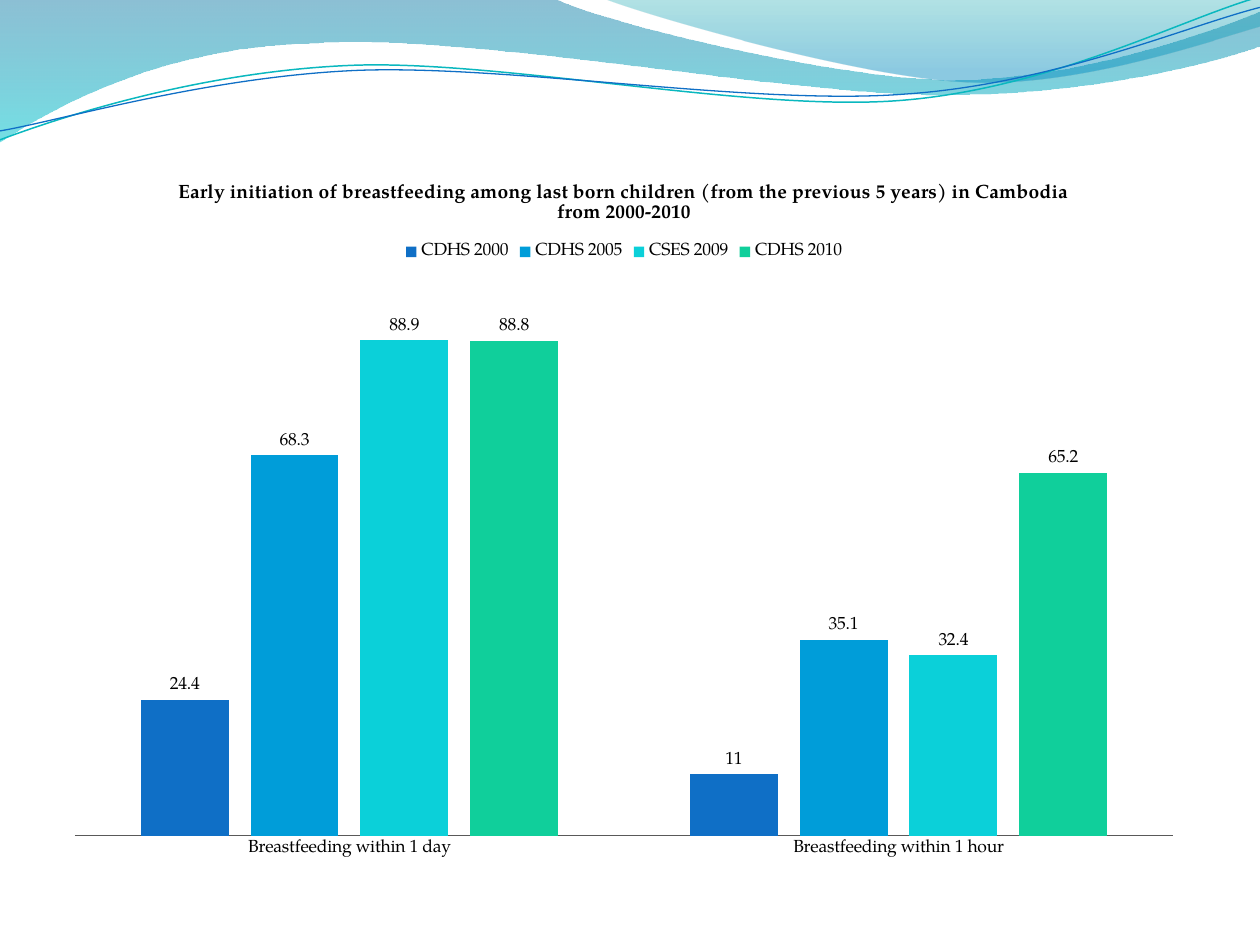
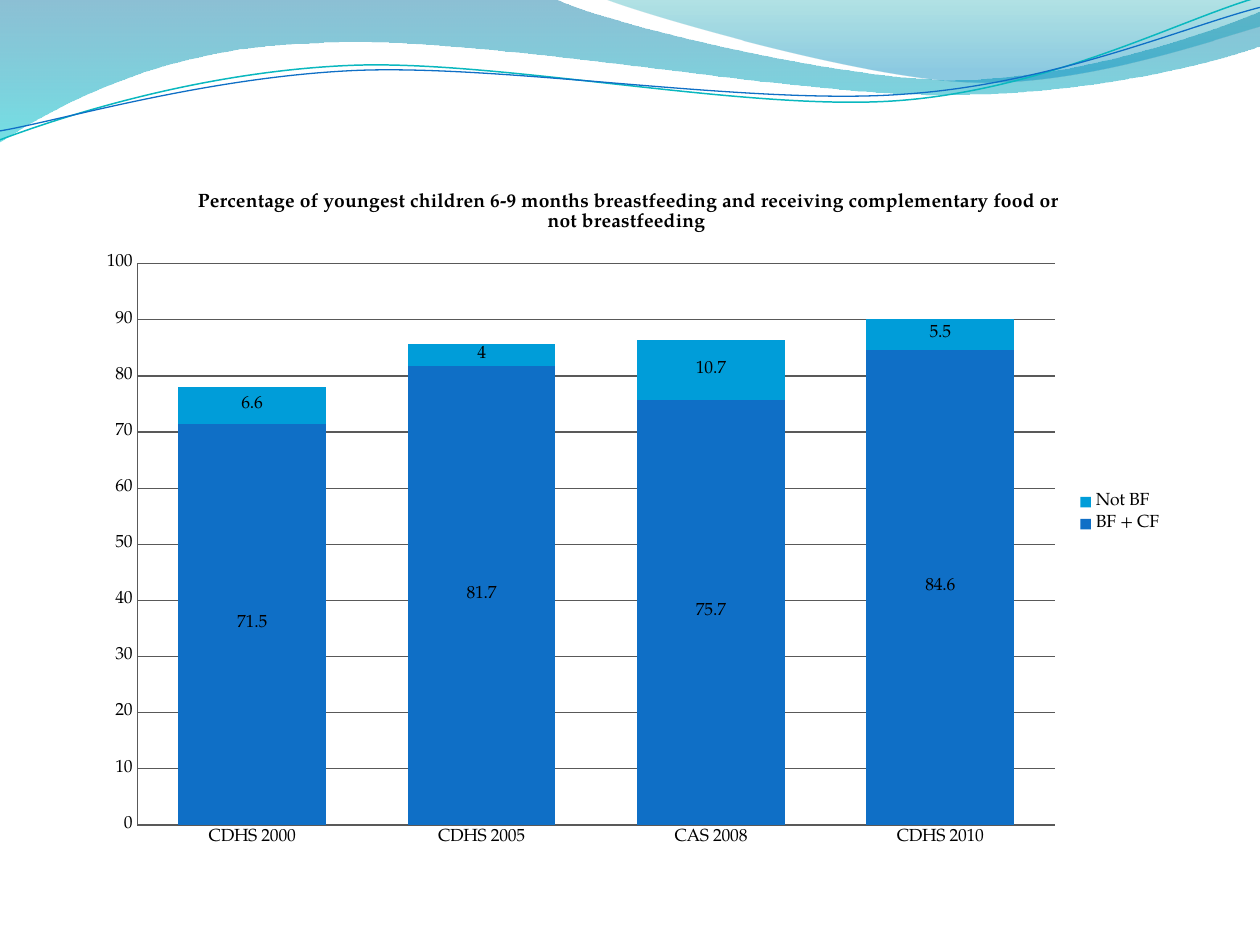
from dataclasses import dataclass
from itertools import chain
from typing import Optional

from lxml.etree import SubElement
from pptx import Presentation
from pptx.chart.data import CategoryChartData as ChartData
from pptx.dml.color import RGBColor
from pptx.enum.chart import XL_CHART_TYPE as ChartType
from pptx.enum.chart import XL_LABEL_POSITION as LabelPos
from pptx.enum.chart import XL_LEGEND_POSITION as LegendPos
from pptx.enum.chart import XL_TICK_MARK as Tick
from pptx.oxml import parse_xml
from pptx.oxml.ns import nsdecls, qn
from pptx.util import Cm, Pt

FONT = "TeX Gyre Pagella"
BLACK, AXIS = "000000", "595959"
BLUE, SKY, CYAN, GREEN = "0F6FC6", "009DD9", "0BD0D9", "10CF9B"
SERIES_COLORS = (BLUE, SKY, CYAN, GREEN)


@dataclass(frozen=True)
class Stop:
    """One gradient stop: place, colour and opacity in percent."""
    position: float
    color: str
    opacity: int


@dataclass(frozen=True)
class Wave:
    """A band or line in cm; a segment holds one point (line) or three (curve)."""
    start: tuple[float, float]
    segments: tuple[tuple[tuple[float, float], ...], ...]
    stops: tuple[Stop, ...] = ()
    line: str = ""
    width: float = 0


@dataclass(frozen=True)
class ChartSpec:
    """A column chart with its box in cm and its plot area as fractions."""
    title: str
    kind: ChartType
    box: tuple[float, float, float, float]
    plot: tuple[float, float, float, float]
    categories: tuple[str, ...]
    series: dict[str, tuple[float, ...]]
    gap: int
    overlap: int
    legend: LegendPos
    show_scale: bool
    label_pos: Optional[LabelPos] = None


WAVES = (
    Wave((0, 0), (
        ((11.18, -0.03),),
        ((12.09, 0.43), (16.87, 1.6), (19.25, 1.6)),
        ((21.67, 1.6), (24.33, 0.66), (25.4, 0.23)),
        ((25.43, 0.91),),
        ((24.97, 1.12), (22.1, 1.93), (18.95, 1.91)),
        ((15.8, 1.91), (9.7, 0.71), (6.53, 0.86)),
        ((3.28, 0.91), (1.17, 2.11), (-0.03, 2.87)),
    ), stops=(Stop(0, "0074A1", 45), Stop(1, "00C6CF", 55))),
    Wave((12.17, -0.03), (
        ((12.93, 0.28), (17.32, 1.57), (19.53, 1.65)),
        ((21.74, 1.75), (24.41, 0.81), (25.4, 0.53)),
        ((25.4, 0),),
    ), stops=(Stop(0, "00A1A9", 30), Stop(0.8, "008BBF", 45))),
    Wave((0, 2.82), (
        ((1.22, 2.36), (4.01, 1.45), (7.04, 1.32)),
        ((10.03, 1.19), (15.06, 2.26), (18.11, 2.03)),
        ((21.16, 1.8), (23.83, 0.38), (25.35, -0.05)),
    ), line="0AB8BF", width=0.85),
    Wave((0, 2.64), (
        ((1.19, 2.44), (4.17, 1.55), (7.19, 1.42)),
        ((10.24, 1.3), (15.16, 2.13), (18.21, 1.9)),
        ((21.23, 1.7), (23.9, 0.53), (25.4, 0.15)),
    ), line=BLUE, width=0.75),
)

CHARTS = (
    ChartSpec(
        "Early initiation of breastfeeding among last born children "
        "(from the previous 5 years) in Cambodia from 2000-2010",
        ChartType.COLUMN_CLUSTERED,
        (1.05, 3.17, 23.06, 14.4), (0.02, 0.17, 0.96, 0.78),
        ("Breastfeeding within 1 day", "Breastfeeding within 1 hour"),
        {"CDHS 2000": (24.4, 11), "CDHS 2005": (68.3, 35.1),
         "CSES 2009": (88.9, 32.4), "CDHS 2010": (88.8, 65.2)},
        gap=150, overlap=-25, legend=LegendPos.TOP, show_scale=False,
        label_pos=LabelPos.OUTSIDE_END),
    ChartSpec(
        "Percentage of youngest children 6-9 months breastfeeding and "
        "receiving complementary food or not breastfeeding ",
        ChartType.COLUMN_STACKED,
        (1.67, 3.36, 22.02, 13.97), (0.05, 0.14, 0.84, 0.81),
        ("CDHS 2000", "CDHS 2005", "CAS 2008", "CDHS 2010"),
        {"BF + CF": (71.5, 81.7, 75.7, 84.6), "Not BF": (6.6, 4, 10.7, 5.5)},
        gap=55, overlap=100, legend=LegendPos.RIGHT, show_scale=True,
        label_pos=LabelPos.CENTER),
)


def rgb(color: str) -> RGBColor:
    """Turn a hex string into a colour."""
    return RGBColor.from_string(color)


def set_font(font, size: float, bold: bool = False) -> None:
    """Apply the shared typeface in black."""
    font.name, font.size, font.bold = FONT, Pt(size), bold
    font.color.rgb = rgb(BLACK)


def set_line(line, color: str, width: float) -> None:
    """Give a line its colour and its width in points."""
    line.color.rgb = rgb(color)
    line.width = Pt(width)


def bend(s, wave: Wave) -> None:
    """Join each run of three straight steps into one cubic curve."""
    steps = iter(list(s.element.iter(qn("a:lnTo"))))
    for segment in wave.segments:
        nodes = [next(steps) for _ in segment]
        if len(nodes) == 3:
            first, *others = nodes
            first.tag = qn("a:cubicBezTo")
            for node in others:
                first.append(node[0])
                node.getparent().remove(node)


def add_wave(slide, wave: Wave):
    """Draw a translucent band or a thin line."""
    builder = slide.shapes.build_freeform(*map(Cm, wave.start))
    points = [(Cm(x), Cm(y)) for x, y in chain.from_iterable(wave.segments)]
    builder.add_line_segments(points, close=bool(wave.stops))
    s = builder.convert_to_shape()
    s.shadow.inherit = False
    bend(s, wave)
    if not wave.stops:
        s.fill.background()
        set_line(s.line, wave.line, wave.width)
        return s
    s.line.fill.background()
    s.fill.gradient()
    s.fill.gradient_angle = 270
    for target, stop in zip(s.fill.gradient_stops, wave.stops):
        target.position = stop.position
        target.color.rgb = rgb(stop.color)
    for node, stop in zip(s.element.iter(qn("a:srgbClr")), wave.stops):
        SubElement(node, qn("a:alpha")).set("val", str(stop.opacity * 1000))
    return s


def place_plot(chart, plot: tuple[float, float, float, float]) -> None:
    """Fix the inner plot area inside the chart."""
    area = chart.element.chart.plotArea
    for old in area.findall(qn("c:layout")):
        area.remove(old)
    sizes = "".join(f'<c:{tag} val="{value}"/>' for tag, value in zip("xywh", plot))
    area.insert(0, parse_xml(
        f'<c:layout {nsdecls("c")}><c:manualLayout><c:layoutTarget val="inner"/>'
        f'<c:xMode val="edge"/><c:yMode val="edge"/>{sizes}'
        '</c:manualLayout></c:layout>'))


def style_axes(chart, show_scale: bool) -> None:
    """Set both axes, with or without the value scale."""
    for axis in (chart.category_axis, chart.value_axis):
        axis.major_tick_mark = axis.minor_tick_mark = Tick.NONE
        set_line(axis.format.line, AXIS, 0.75)
    scale = chart.value_axis
    scale.minimum_scale, scale.maximum_scale, scale.major_unit = 0, 100, 10
    scale.visible = scale.has_major_gridlines = show_scale
    if show_scale:
        set_line(scale.major_gridlines.format.line, AXIS, 0.75)


def add_column_chart(slide, spec: ChartSpec) -> None:
    """Add a titled column chart with value labels."""
    data = ChartData()
    data.categories = spec.categories
    for name, values in spec.series.items():
        data.add_series(name, values)
    chart = slide.shapes.add_chart(spec.kind, *map(Cm, spec.box), data).chart
    set_font(chart.font, 10)

    chart.has_title = True
    p = chart.chart_title.text_frame.paragraphs[0]
    r = p.add_run()
    r.text = spec.title
    set_font(r.font, 11, bold=True)

    chart.has_legend = True
    chart.legend.position = spec.legend
    chart.legend.include_in_layout = False
    set_font(chart.legend.font, 10)

    plot = chart.plots[0]
    plot.vary_by_categories = False
    plot.gap_width, plot.overlap = spec.gap, spec.overlap
    plot.has_data_labels = True
    labels = plot.data_labels
    labels.show_value = True
    labels.position = spec.label_pos
    set_font(labels.font, 10)
    for series, color in zip(plot.series, SERIES_COLORS):
        series.format.fill.solid()
        series.format.fill.fore_color.rgb = rgb(color)
    style_axes(chart, spec.show_scale)
    place_plot(chart, spec.plot)


def main() -> None:
    """Put the waves on the blank layout and build one slide per chart."""
    prs = Presentation()
    prs.slide_width, prs.slide_height = Cm(25.4), Cm(19.05)
    blank = prs.slide_layouts[6]
    slides = [prs.slides.add_slide(blank) for _ in CHARTS]
    for wave in WAVES:
        blank.shapes.element.append(add_wave(slides[0], wave).element)
    for slide, spec in zip(slides, CHARTS):
        add_column_chart(slide, spec)
    prs.save("out.pptx")


if __name__ == "__main__":
    main()
